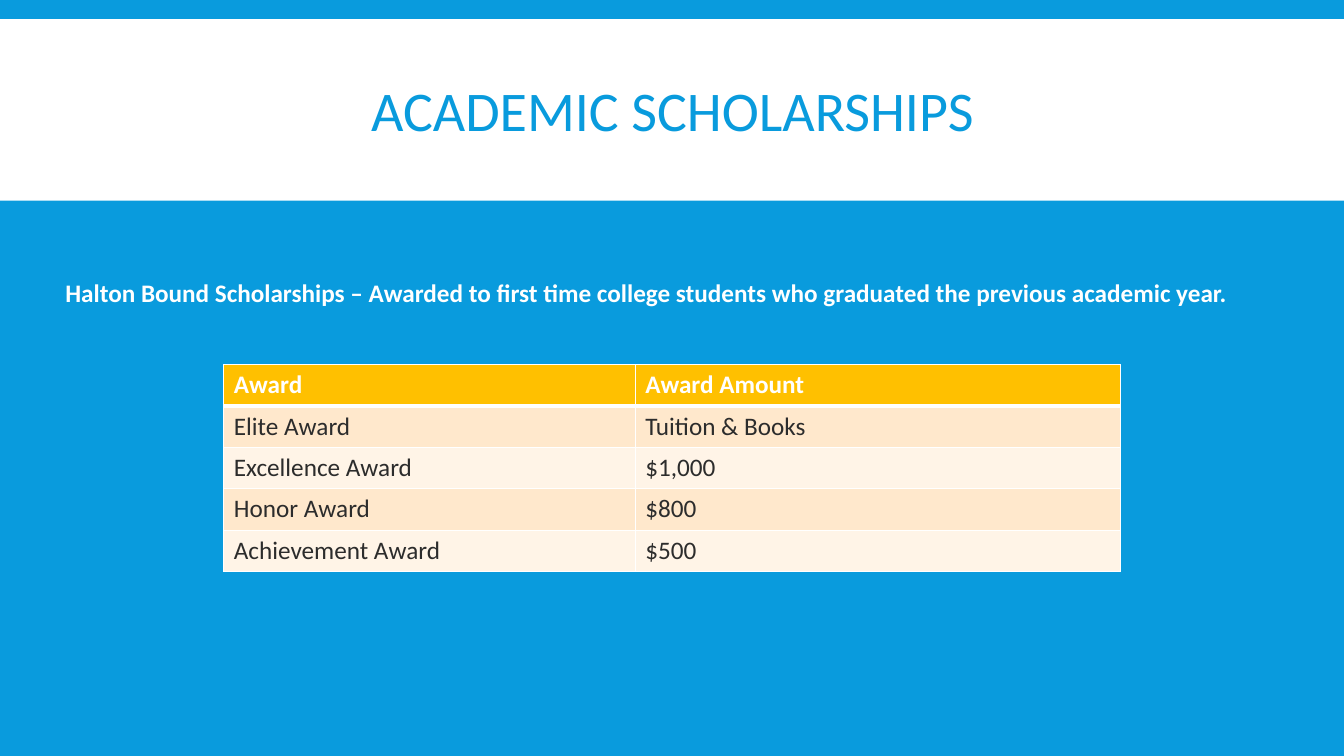
from typing import NamedTuple

from lxml import etree
from pptx import Presentation
from pptx.dml.color import RGBColor
from pptx.enum.shapes import MSO_SHAPE
from pptx.enum.text import MSO_ANCHOR, PP_ALIGN
from pptx.oxml.ns import qn
from pptx.slide import Slide
from pptx.table import _Cell
from pptx.text.text import TextFrame
from pptx.util import Inches, Pt

RECTANGLE = MSO_SHAPE.RECTANGLE
TOP, MIDDLE = MSO_ANCHOR.TOP, MSO_ANCHOR.MIDDLE
LEFT, CENTER = PP_ALIGN.LEFT, PP_ALIGN.CENTER

BLUE = RGBColor(0x09, 0x9B, 0xDD)
WHITE = RGBColor(0xFF, 0xFF, 0xFF)
GOLD = RGBColor(0xFF, 0xC0, 0x00)
PEACH = RGBColor(0xFF, 0xE8, 0xCC)
CREAM = RGBColor(0xFF, 0xF4, 0xE7)
CHARCOAL = RGBColor(0x2C, 0x2C, 0x2C)

FONT = "Calibri"
COLUMN_WIDTHS = (4.08, 4.81)
ROW_HEIGHT = 0.41


class Box(NamedTuple):
    left: float
    top: float
    width: float
    height: float

    def lengths(self) -> list[Inches]:
        return [Inches(value) for value in self]


class Award(NamedTuple):
    name: str
    amount: str


HEADINGS = Award("Award", "Award Amount")
AWARDS = [
    Award("Elite Award", "Tuition & Books"),
    Award("Excellence Award", "$1,000"),
    Award("Honor Award", "$800"),
    Award("Achievement Award", "$500"),
]


def write(frame: TextFrame, text: str, *, size: float = 18, color: RGBColor = WHITE,
          bold: bool = False, align: PP_ALIGN = LEFT, spacing: float = 1.0) -> None:
    paragraph = frame.paragraphs[0]
    paragraph.alignment = align
    paragraph.line_spacing = spacing
    run = paragraph.add_run()
    run.text = text
    run.font.name = FONT
    run.font.size = Pt(size)
    run.font.bold = bold
    run.font.color.rgb = color


def add_text_area(slide: Slide, box: Box, anchor: MSO_ANCHOR = TOP) -> TextFrame:
    frame = slide.shapes.add_textbox(*box.lengths()).text_frame
    frame.word_wrap = True
    frame.vertical_anchor = anchor
    return frame


def add_border(cell: _Cell, side: str, points: float) -> None:
    properties = cell._tc.get_or_add_tcPr()
    line = etree.SubElement(properties, qn(f"a:ln{side}"), w=str(Pt(points)))
    fill = etree.SubElement(line, qn("a:solidFill"))
    etree.SubElement(fill, qn("a:srgbClr"), val=str(WHITE))


def add_award_table(slide: Slide, left: float, top: float) -> None:
    rows = [HEADINGS, *AWARDS]
    box = Box(left, top, sum(COLUMN_WIDTHS), ROW_HEIGHT * len(rows))
    table = slide.shapes.add_table(len(rows), len(COLUMN_WIDTHS), *box.lengths()).table
    for column, width in zip(table.columns, COLUMN_WIDTHS):
        column.width = Inches(width)
    for index, award in enumerate(rows):
        heading = index == 0
        band = GOLD if heading else PEACH if index % 2 else CREAM
        for cell, text in zip(table.rows[index].cells, award):
            # The rule under the heading row is thicker than the rest
            for side in "LRTB":
                thick = (heading and side == "B") or (index == 1 and side == "T")
                add_border(cell, side, 3 if thick else 1)
            cell.fill.solid()
            cell.fill.fore_color.rgb = band
            write(cell.text_frame, text, color=WHITE if heading else CHARCOAL, bold=heading)


def main() -> None:
    presentation = Presentation()
    presentation.slide_width = Inches(13.33)
    presentation.slide_height = Inches(7.5)
    slide = presentation.slides.add_slide(presentation.slide_layouts[6])
    slide.background.fill.solid()
    slide.background.fill.fore_color.rgb = BLUE

    # Title band
    title_band = slide.shapes.add_shape(RECTANGLE, *Box(0, 0.19, 13.33, 1.8).lengths())
    title_band.shadow.inherit = False
    title_band.fill.solid()
    title_band.fill.fore_color.rgb = WHITE
    title_band.line.fill.background()
    title = add_text_area(slide, Box(1.32, 0.31, 10.7, 1.65), MIDDLE)
    write(title, "ACADEMIC SCHOLARSHIPS", size=40, color=BLUE, align=CENTER, spacing=0.85)

    # Awards
    add_award_table(slide, 2.22, 3.62)

    # Eligibility statement
    eligibility = add_text_area(slide, Box(0.55, 2.7, 12.23, 0.4))
    write(eligibility, "Halton Bound Scholarships – Awarded to first time college students "
          "who graduated the previous academic year.", bold=True)

    presentation.save("out.pptx")


if __name__ == "__main__":
    main()
